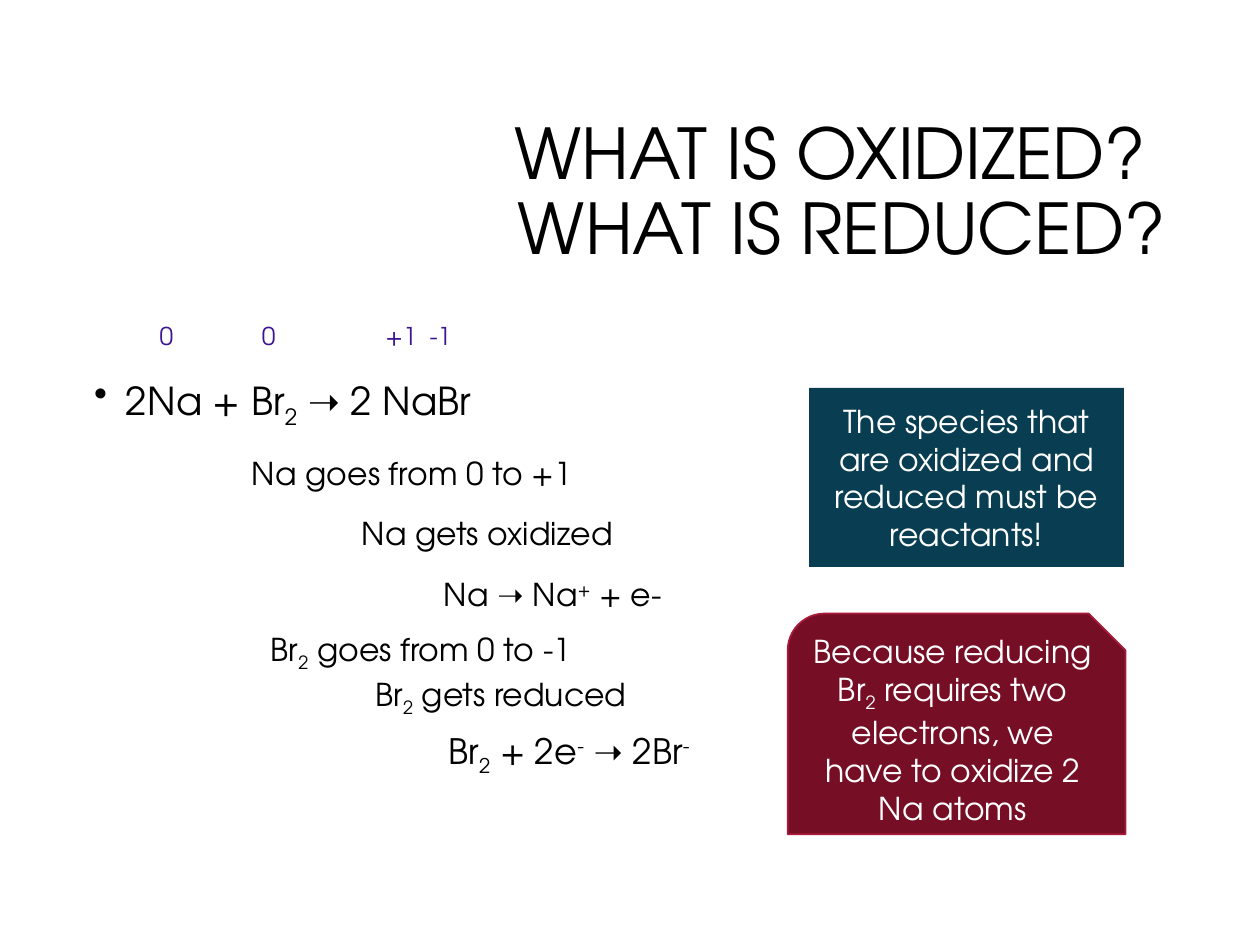
from dataclasses import dataclass

from lxml.etree import SubElement
from pptx import Presentation
from pptx.dml.color import RGBColor as Color
from pptx.enum.shapes import MSO_SHAPE as Preset
from pptx.enum.text import MSO_ANCHOR as Anchor, PP_ALIGN as Align
from pptx.oxml.ns import qn
from pptx.util import Cm, Pt


@dataclass(frozen=True)
class Theme:
    font: str = "TeX Gyre Adventor"
    black: Color = Color(0x00, 0x00, 0x00)
    white: Color = Color(0xFF, 0xFF, 0xFF)
    violet: Color = Color(0x3A, 0x14, 0x93)
    teal: Color = Color(0x09, 0x3E, 0x52)
    wine: Color = Color(0x76, 0x0E, 0x25)
    wine_edge: Color = Color(0xA9, 0x19, 0x3A)
    title: int = 40
    equation: int = 22
    half_reaction: int = 20
    text: int = 18
    number: int = 14


@dataclass(frozen=True)
class Run:
    text: str
    baseline: int = 0


@dataclass(frozen=True)
class Box:
    left: float
    top: float
    width: float
    height: float

    def lengths(self) -> tuple:
        return Cm(self.left), Cm(self.top), Cm(self.width), Cm(self.height)


@dataclass(frozen=True)
class Step:
    box: Box
    runs: tuple
    size: int


@dataclass(frozen=True)
class Callout:
    preset: Preset
    box: Box
    runs: tuple
    fill: Color
    edge: Color | None = None


THEME = Theme()
SUB_TWO = Run("2", -25000)
SUPER_PLUS = Run("+", 30000)
SUPER_MINUS = Run("-", 30000)

STEPS = (
    Step(Box(4.83, 9.02, 6.96, 1.02), (Run("Na goes from 0 to +1"),), THEME.text),
    Step(Box(7.04, 10.24, 5.66, 1.02), (Run("Na gets oxidized"),), THEME.text),
    Step(Box(8.69, 11.46, 5.08, 1.02),
         (Run("Na ➝ Na"), SUPER_PLUS, Run(" + e-")), THEME.text),
    Step(Box(5.21, 12.57, 6.71, 1.02),
         (Run("Br"), SUB_TWO, Run(" goes from 0 to -1")), THEME.text),
    Step(Box(7.32, 13.49, 5.82, 1.02),
         (Run("Br"), SUB_TWO, Run(" gets reduced")), THEME.text),
    Step(Box(8.79, 14.58, 5.54, 1.12),
         (Run("Br"), SUB_TWO, Run(" + 2e"), SUPER_MINUS, Run(" ➝ 2Br"), SUPER_MINUS),
         THEME.half_reaction),
)

CALLOUTS = (
    Callout(Preset.RECTANGLE, Box(16.31, 7.82, 6.35, 3.61),
            (Run("The species that are oxidized and reduced must be reactants!"),),
            THEME.teal),
    Callout(Preset.SNIP_ROUND_RECTANGLE, Box(15.88, 12.37, 6.81, 4.45),
            (Run("Because reducing Br"), SUB_TWO,
             Run(" requires two electrons, we have to oxidize 2 Na atoms")),
            THEME.wine, THEME.wine_edge),
)


def write_text(shape, runs: tuple, *, size: int, color: Color = THEME.black,
               align: Align = Align.LEFT, anchor: Anchor = Anchor.TOP,
               spacing: float = 1.0, bullet: str = "", tabs: tuple = ()) -> None:
    frame = shape.text_frame
    frame.word_wrap = True
    frame.vertical_anchor = anchor
    paragraph = frame.paragraphs[0]
    properties = paragraph._p.get_or_add_pPr()
    if bullet:
        indent = Cm(0.64)
        properties.set("marL", str(indent))
        properties.set("indent", str(-indent))
        SubElement(properties, qn("a:buChar"), char=bullet)
    if tabs:
        tab_list = SubElement(properties, qn("a:tabLst"))
        for position in tabs:
            SubElement(tab_list, qn("a:tab"), pos=str(Cm(position)), algn="l")
    paragraph.alignment = align
    paragraph.line_spacing = spacing
    for index, part in enumerate(runs):
        for line_number, line in enumerate(part.text.split("\n")):
            if line_number:
                paragraph.add_line_break()
            run = paragraph.add_run()
            run.text = line
            run.font.name = THEME.font
            run.font.size = Pt(size)
            run.font.color.rgb = color
            if part.baseline:
                run.font._element.set("baseline", str(part.baseline))


def add_text(slide, box: Box, runs: tuple, **text_format) -> None:
    write_text(slide.shapes.add_textbox(*box.lengths()), runs, **text_format)


def add_callout(slide, callout: Callout) -> None:
    shape = slide.shapes.add_shape(callout.preset, *callout.box.lengths())
    shape.shadow.inherit = False
    shape.fill.solid()
    shape.fill.fore_color.rgb = callout.fill
    if callout.edge is None:
        shape.line.fill.background()
    else:
        shape.line.color.rgb = callout.edge
        shape.line.width = Pt(1)
    write_text(shape, callout.runs, size=THEME.text, color=THEME.white,
               align=Align.CENTER, anchor=Anchor.MIDDLE)


def main() -> None:
    presentation = Presentation()
    presentation.slide_width, presentation.slide_height = Cm(25.4), Cm(19.05)
    slide = presentation.slides.add_slide(presentation.slide_layouts[6])
    add_text(slide, Box(6.05, 2.13, 17.7, 3.58),
             (Run("WHAT IS OXIDIZED? \nWHAT IS REDUCED?"),), size=THEME.title,
             align=Align.RIGHT, anchor=Anchor.MIDDLE, spacing=0.9)
    add_text(slide, Box(1.65, 7.49, 22.1, 2.03),
             (Run("2Na + Br"), SUB_TWO, Run(" ➝ 2 NaBr")),
             size=THEME.equation, spacing=0.9, bullet="•")
    add_text(slide, Box(2.97, 6.35, 8.71, 0.86), (Run("0\t0\t+1\t-1"),),
             size=THEME.number, color=THEME.violet, tabs=(2.06, 4.55, 5.44))
    for step in STEPS:
        add_text(slide, step.box, step.runs, size=step.size)
    for callout in CALLOUTS:
        add_callout(slide, callout)
    presentation.save("out.pptx")


if __name__ == "__main__":
    main()
